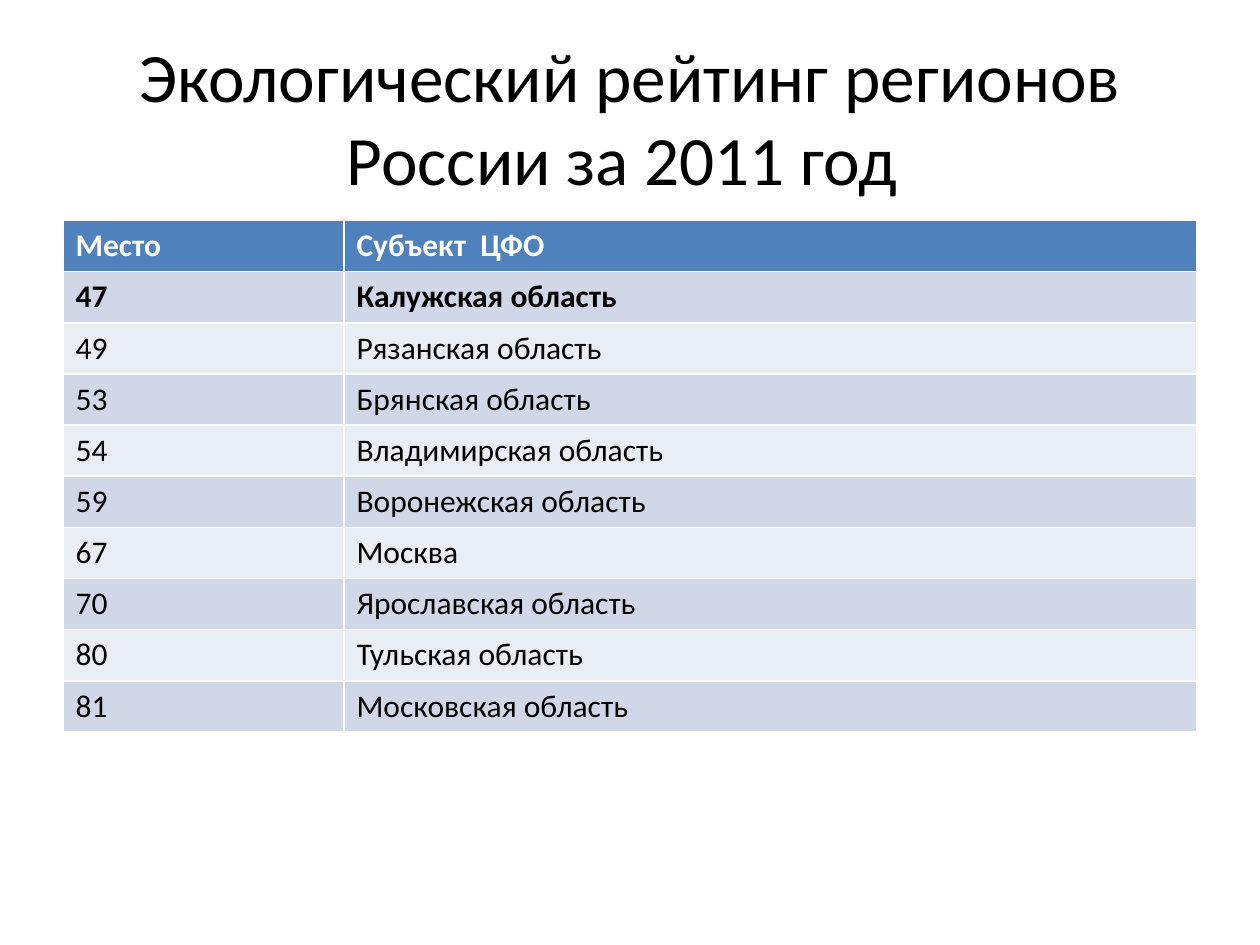
"""Builds a slide with the 2011 ecological rating of Russian regions."""
from pptx import Presentation
from pptx.dml.color import RGBColor
from pptx.enum.text import MSO_ANCHOR, PP_ALIGN
from pptx.util import Inches, Pt

MIDDLE = MSO_ANCHOR.MIDDLE
CENTER = PP_ALIGN.CENTER
HEADER_FILL = "4F81BD"
BAND_FILLS = ("E9EDF4", "D0D8E8")
RATING = [
    ("Место", "Субъект  ЦФО"),
    ("47", "Калужская область"),
    ("49", "Рязанская область"),
    ("53", "Брянская область"),
    ("54", "Владимирская область"),
    ("59", "Воронежская область"),
    ("67", "Москва"),
    ("70", "Ярославская область"),
    ("80", "Тульская область"),
    ("81", "Московская область"),
]


def color(value):
    return RGBColor.from_string(value)


def style(paragraph, size, value, bold=False):
    font = paragraph.font
    font.name = "Calibri"
    font.size = Pt(size)
    font.bold = bold
    font.color.rgb = color(value)


prs = Presentation()
prs.slide_width = Inches(10)
prs.slide_height = Inches(7.5)
slide = prs.slides.add_slide(prs.slide_layouts[6])

heading = slide.shapes.add_textbox(Inches(0.5), Inches(0.3), Inches(9), Inches(1.25)).text_frame
heading.word_wrap = True
heading.vertical_anchor = MIDDLE
heading.text = "Экологический рейтинг регионов России за 2011 год "
heading.paragraphs[0].alignment = CENTER
style(heading.paragraphs[0], 39.6, "000000")

rating = slide.shapes.add_table(
    len(RATING), 2, Inches(0.5), Inches(1.75), Inches(9), Inches(4.06)
).table
rating.columns[0].width = Inches(2.23)
rating.columns[1].width = Inches(6.77)

for place, entry in enumerate(RATING):
    is_header = place == 0
    for column, label in enumerate(entry):
        cell = rating.cell(place, column)
        cell.text = label
        cell.fill.solid()
        cell.fill.fore_color.rgb = color(HEADER_FILL if is_header else BAND_FILLS[place % 2])
        style(cell.text_frame.paragraphs[0], 18, "FFFFFF" if is_header else "000000", place < 2)

prs.save("out.pptx")
